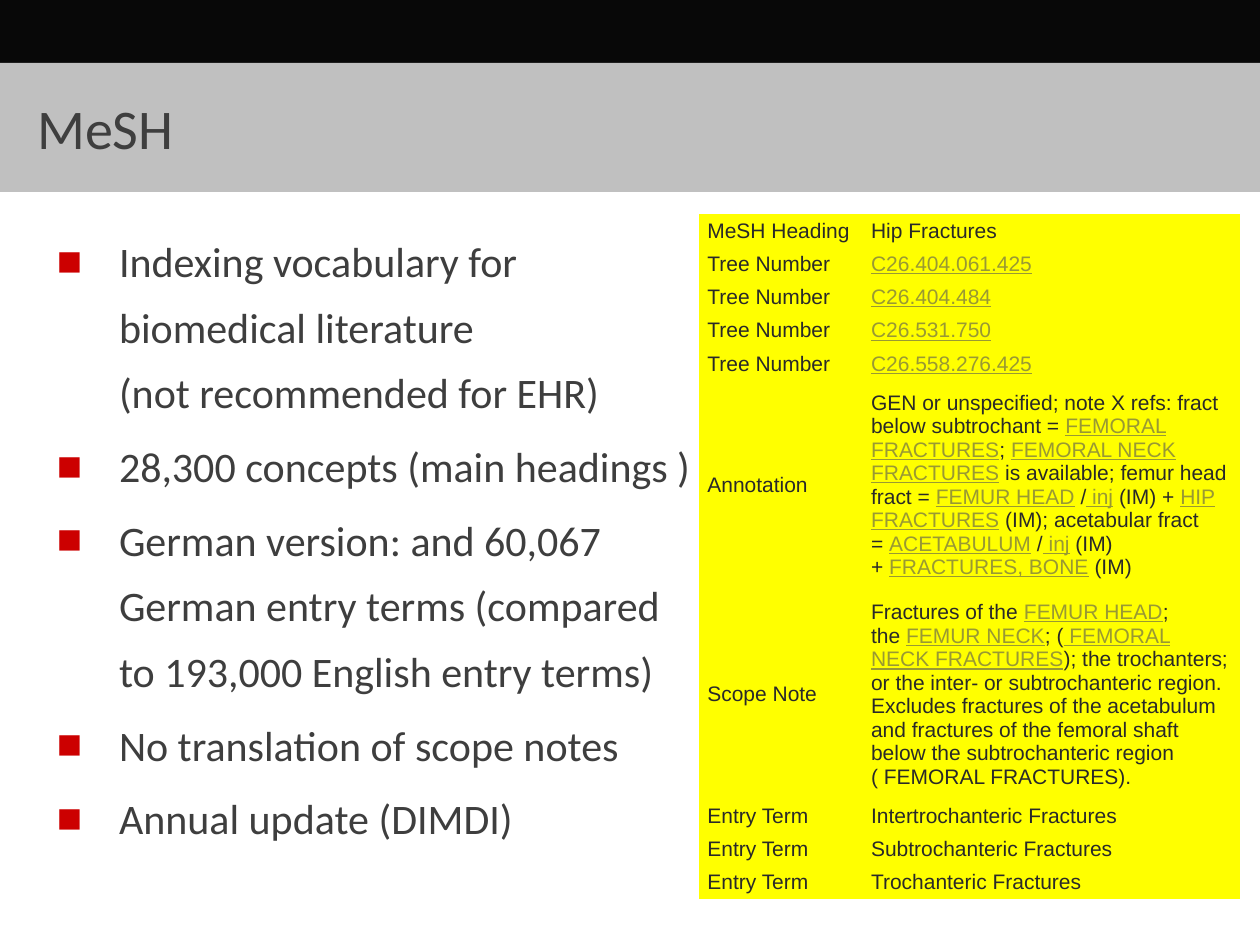
from lxml.etree import SubElement
from pptx import Presentation
from pptx.dml.color import RGBColor
from pptx.enum.shapes import MSO_SHAPE
from pptx.enum.text import MSO_ANCHOR, PP_ALIGN
from pptx.oxml.ns import qn
from pptx.util import Cm, Pt

COLOURS = {
    "band": "080808",
    "title_bar": "C0C0C0",
    "body": "3E3E3E",
    "bullet": "CC0000",
    "table": "FFFF00",
    "cell": "292929",
    "link": "999933",
}

TITLE = "MeSH"

# Each bullet is a tuple of its lines.
BULLETS = [
    ("Indexing vocabulary for ", "biomedical literature ", "(not recommended for EHR)"),
    ("28,300 concepts (main headings )",),
    ("German version: and 60,067 ", "German entry terms (compared ",
     "to 193,000 English entry terms)"),
    ("No translation of scope notes",),
    ("Annual update (DIMDI)",),
]

# In the right column, | switches link style on and off and ~ is a no-break space.
RECORD = [
    ("MeSH Heading", "Hip Fractures"),
    ("Tree Number", "|C26.404.061.425|"),
    ("Tree Number", "|C26.404.484|"),
    ("Tree Number", "|C26.531.750|"),
    ("Tree Number", "|C26.558.276.425|"),
    ("Annotation",
     "GEN or unspecified; note X refs: fract below subtrochant =~|FEMORAL FRACTURES|;~"
     "|FEMORAL NECK FRACTURES|~is available; femur head fract =~|FEMUR HEAD|~/|~inj|"
     "~(IM) +~|HIP FRACTURES|~(IM); acetabular fract =~|ACETABULUM|~/|~inj|~(IM) +~"
     "|FRACTURES, BONE|~(IM)"),
    ("Scope Note",
     "Fractures of the~|FEMUR HEAD|; the~|FEMUR NECK|; (|~FEMORAL NECK FRACTURES|); "
     "the trochanters; or the inter- or subtrochanteric region. Excludes fractures of "
     "the acetabulum and fractures of the femoral shaft below the subtrochanteric "
     "region (~FEMORAL FRACTURES)."),
    ("Entry Term", "Intertrochanteric Fractures"),
    ("Entry Term", "Subtrochanteric Fractures"),
    ("Entry Term", "Trochanteric Fractures"),
]
LONG_ROWS = ("Annotation", "Scope Note")
ROW_HEIGHT, LONG_ROW_HEIGHT = 0.65, 4.09
COLUMN_WIDTHS = (3.3, 7.6)


def colour(name):
    return RGBColor.from_string(COLOURS[name])


def add_text(para, text, *, size, font, fill, underline=False):
    span = para.add_run()
    span.text = text
    span.font.size = Pt(size)
    span.font.name = font
    span.font.color.rgb = colour(fill)
    if underline:
        span.font.underline = True


def add_bar(page, top, height, fill):
    bar = page.shapes.add_shape(MSO_SHAPE.RECTANGLE, 0, Cm(top), Cm(25.4), Cm(height))
    bar.shadow.inherit = False
    bar.fill.solid()
    bar.fill.fore_color.rgb = colour(fill)
    bar.line.fill.background()
    return bar


def add_title(page):
    frame = add_bar(page, 1.27, 2.6, "title_bar").text_frame
    frame.vertical_anchor = MSO_ANCHOR.MIDDLE
    frame.margin_left = Cm(0.75)
    para = frame.paragraphs[0]
    para.alignment = PP_ALIGN.LEFT
    add_text(para, TITLE, size=32, font="Calibri", fill="body")


def set_bullet(para):
    properties = para._p.get_or_add_pPr()
    properties.set("marL", str(Cm(1.25)))
    properties.set("indent", str(-Cm(1.25)))
    bullet_colour = SubElement(properties, qn("a:buClr"))
    SubElement(bullet_colour, qn("a:srgbClr"), val=COLOURS["bullet"])
    SubElement(properties, qn("a:buFont"), typeface="Arial")
    SubElement(properties, qn("a:buChar"), char="■")


def add_bullets(page):
    box = page.shapes.add_textbox(Cm(0.9), Cm(4.32), Cm(23.8), Cm(13.4))
    frame = box.text_frame
    frame.word_wrap = True
    for index, lines in enumerate(BULLETS):
        para = frame.add_paragraph() if index else frame.paragraphs[0]
        set_bullet(para)
        para.line_spacing = 1.3
        para.space_before = Pt(4.8 if index else 0)
        for number, line in enumerate(lines):
            if number:
                para.add_line_break()
            add_text(para, line, size=24, font="Calibri", fill="body")


def fill_cell(cell, text):
    cell.fill.solid()
    cell.fill.fore_color.rgb = colour("table")
    cell.vertical_anchor = MSO_ANCHOR.MIDDLE
    cell.margin_left = cell.margin_right = Cm(0.16)
    cell.margin_top = cell.margin_bottom = Cm(0.08)
    para = cell.text_frame.paragraphs[0]
    for index, part in enumerate(text.replace("~", chr(160)).split("|")):
        linked = index % 2 == 1
        if part:
            add_text(para, part, size=12, font="Arial",
                     fill="link" if linked else "cell", underline=linked)


def add_record(page):
    heights = [LONG_ROW_HEIGHT if label in LONG_ROWS else ROW_HEIGHT for label, _ in RECORD]
    table = page.shapes.add_table(
        len(RECORD), len(COLUMN_WIDTHS), Cm(14.1), Cm(4.32),
        Cm(sum(COLUMN_WIDTHS)), Cm(sum(heights))).table
    table.first_row = table.horz_banding = False
    for column, width in zip(table.columns, COLUMN_WIDTHS):
        column.width = Cm(width)
    for row, height, texts in zip(table.rows, heights, RECORD):
        row.height = Cm(height)
        for cell, text in zip(row.cells, texts):
            fill_cell(cell, text)
    # "No Style, No Grid" keeps the cells free of borders.
    table._tbl.tblPr.find(qn("a:tableStyleId")).text = "{2D5ABB26-0587-4C30-8999-92F81FD0307C}"


def main():
    deck = Presentation()
    deck.slide_width, deck.slide_height = Cm(25.4), Cm(19.05)
    page = deck.slides.add_slide(deck.slide_layouts[6])
    add_bar(page, 0, 1.27, "band")
    add_title(page)
    add_bullets(page)
    add_record(page)
    deck.save("out.pptx")


if __name__ == "__main__":
    main()
